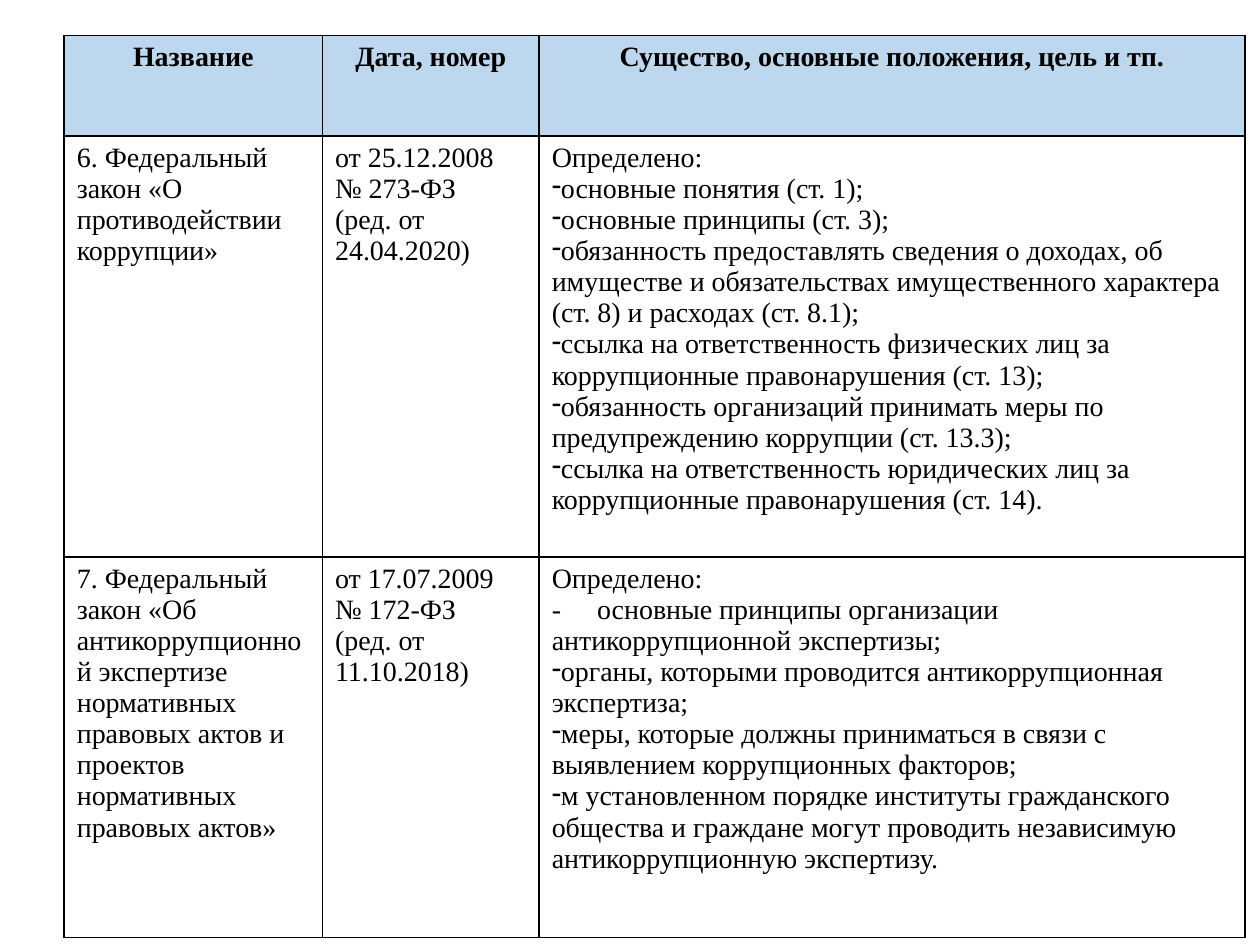
from typing import NamedTuple

from lxml import etree
from pptx import Presentation
from pptx.dml.color import RGBColor
from pptx.enum.text import PP_ALIGN
from pptx.oxml.ns import qn
from pptx.util import Inches, Pt

LEFT, CENTER = PP_ALIGN.LEFT, PP_ALIGN.CENTER
BLACK = RGBColor(0x00, 0x00, 0x00)
BLUE = RGBColor(0xBD, 0xD7, 0xEE)
FONT = {"name": "Times New Roman", "size": Pt(16)}
WIDTHS = (2.05, 1.72, 5.6)
HEIGHTS = (0.8, 3.34, 3.02)
SIDES = ("a:lnL", "a:lnR", "a:lnT", "a:lnB")
TAB = Inches(0.36)


class Law(NamedTuple):
    name: str
    date: tuple[str, ...]
    intro: tuple[str, ...]
    items: tuple[str, ...]


HEADS = ("Название", "Дата, номер", "Существо, основные положения, цель и тп.")
LAWS = (
    Law(
        "6. Федеральный закон «О противодействии коррупции»",
        ("от 25.12.2008", "№ 273-ФЗ", "(ред. от 24.04.2020)"),
        ("Определено:",),
        (
            "основные понятия (ст. 1);",
            "основные принципы (ст. 3);",
            "обязанность предоставлять сведения о доходах, об имуществе и "
            "обязательствах имущественного характера (ст. 8) и расходах (ст. 8.1);",
            "ссылка на ответственность физических лиц за коррупционные "
            "правонарушения (ст. 13);",
            "обязанность организаций принимать меры по предупреждению "
            "коррупции (ст. 13.3);",
            "ссылка на ответственность юридических лиц за коррупционные "
            "правонарушения (ст. 14).",
        ),
    ),
    Law(
        "7. Федеральный закон «Об антикоррупционной экспертизе нормативных "
        "правовых актов и проектов нормативных правовых актов»",
        ("от 17.07.2009", "№ 172-ФЗ", "(ред. от 11.10.2018)"),
        (
            "Определено:",
            "-\tосновные принципы организации антикоррупционной экспертизы;",
        ),
        (
            "органы, которыми проводится антикоррупционная экспертиза;",
            "меры, которые должны приниматься в связи с выявлением "
            "коррупционных факторов;",
            "м установленном порядке институты гражданского общества и "
            "граждане могут проводить независимую антикоррупционную экспертизу.",
        ),
    ),
)


def add_lines(cell) -> None:
    props = cell._tc.get_or_add_tcPr()
    for side in SIDES:
        line = etree.SubElement(props, qn(side), w=str(Pt(1)))
        fill = etree.SubElement(line, qn("a:solidFill"))
        etree.SubElement(fill, qn("a:srgbClr"), val=str(BLACK))


def add_mark(para) -> None:
    """Give the paragraph a dash bullet flush with its text."""
    props = para._p.get_or_add_pPr()
    props.set("marL", "0")
    props.set("indent", "0")
    etree.SubElement(props, qn("a:buFontTx"))
    etree.SubElement(props, qn("a:buChar"), char="-")


def add_tab(para) -> None:
    tabs = etree.SubElement(para._p.get_or_add_pPr(), qn("a:tabLst"))
    etree.SubElement(tabs, qn("a:tab"), pos=str(TAB), algn="l")


def fill_cell(cell, texts: tuple[str, ...], items: tuple[str, ...] = (),
              head: bool = False) -> None:
    add_lines(cell)
    if head:
        cell.fill.solid()
        cell.fill.fore_color.rgb = BLUE
    else:
        cell.fill.background()
    frame = cell.text_frame
    for i, text in enumerate(texts + items):
        para = frame.add_paragraph() if i else frame.paragraphs[0]
        para.alignment = CENTER if head else LEFT
        if i >= len(texts):
            add_mark(para)
        elif "\t" in text:
            add_tab(para)
        run = para.add_run()
        run.text = text
        for key, value in {**FONT, "bold": head}.items():
            setattr(run.font, key, value)
        run.font.color.rgb = BLACK


def main() -> None:
    deck = Presentation()
    deck.slide_width, deck.slide_height = Inches(10), Inches(7.5)
    slide = deck.slides.add_slide(deck.slide_layouts[6])
    table = slide.shapes.add_table(
        len(HEIGHTS), len(WIDTHS), Inches(0.51), Inches(0.28),
        Inches(sum(WIDTHS)), Inches(sum(HEIGHTS))).table
    table.first_row = table.horz_banding = False
    for col, width in zip(table.columns, WIDTHS):
        col.width = Inches(width)
    for row, height in zip(table.rows, HEIGHTS):
        row.height = Inches(height)

    for c, head in enumerate(HEADS):
        fill_cell(table.cell(0, c), (head,), head=True)
    for r, law in enumerate(LAWS, 1):
        fill_cell(table.cell(r, 0), (law.name,))
        fill_cell(table.cell(r, 1), law.date)
        fill_cell(table.cell(r, 2), law.intro, law.items)
    deck.save("out.pptx")


if __name__ == "__main__":
    main()
